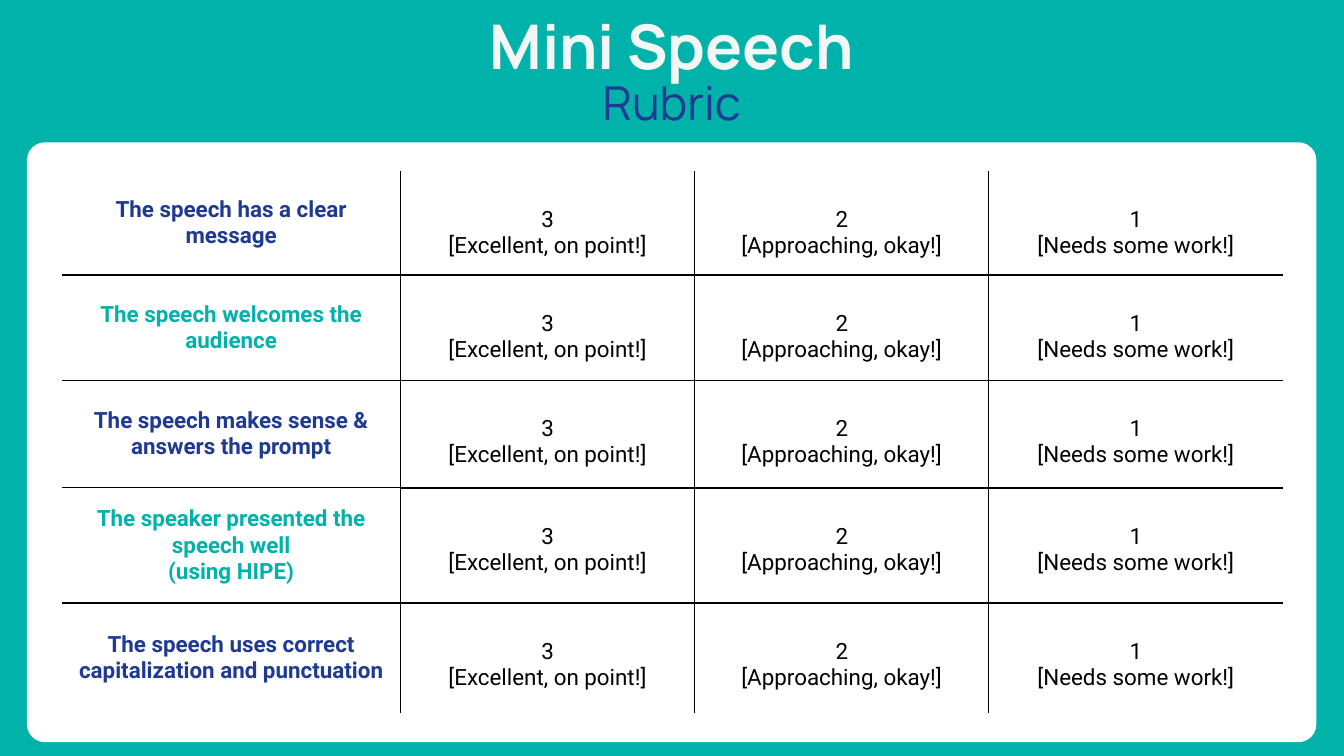
import pptx
import pptx.util
import pptx.dml.color
import pptx.enum.shapes
import pptx.enum.text
import pptx.oxml.ns
import lxml.etree

Cm = pptx.util.Cm
Pt = pptx.util.Pt
RGB = pptx.dml.color.RGBColor
ALIGN = pptx.enum.text.PP_ALIGN
ANCHOR = pptx.enum.text.MSO_ANCHOR

TEAL = RGB(0x00, 0xB2, 0xA9)
NAVY = RGB(0x1F, 0x3A, 0x92)
PALE = RGB(0xF2, 0xF6, 0xF5)
WHITE = RGB(0xFF, 0xFF, 0xFF)
BLACK = RGB(0x00, 0x00, 0x00)

GOALS = [
    "The speech has a clear message",
    "The speech welcomes the audience",
    "The speech makes sense & answers the prompt",
    "The speaker presented the speech well\n(using HIPE)",
    "The speech uses correct capitalization and punctuation",
]
MARKS = [
    "3\n[Excellent, on point!]",
    "2\n[Approaching, okay!]",
    "1\n[Needs some work!]",
]
COLS = [6.4, 5.56, 5.56, 5.56]
ROWS = [1.97, 1.99, 2.03, 2.18, 2.07]


class Deck:
    head = "Manrope"
    body = "Roboto"
    size = 12

    def __init__(self, file):
        self.slide = file.slides.add_slide(file.slide_layouts[5])
        fill = self.slide.background.fill
        fill.solid()
        fill.fore_color.rgb = TEAL

    def style(self, para, font, size, color, bold):
        para.alignment = ALIGN.CENTER
        for run in para.runs:
            run.font.name = font
            run.font.size = Pt(size)
            run.font.color.rgb = color
            run.font.bold = bold

    def title(self, main, sub, left, top, width, height):
        shape = self.slide.shapes.title
        shape.left, shape.top = Cm(left), Cm(top)
        shape.width, shape.height = Cm(width), Cm(height)
        frame = shape.text_frame
        frame.auto_size = pptx.enum.text.MSO_AUTO_SIZE.NONE
        frame.vertical_anchor = ANCHOR.MIDDLE
        frame.text = f"{main}\n{sub}"
        first, second = frame.paragraphs
        self.style(first, self.head, 33, PALE, True)
        self.style(second, self.head, 25, NAVY, False)
        for para in frame.paragraphs:
            para.line_spacing = 0.85

    def panel(self, left, top, width, height):
        kind = pptx.enum.shapes.MSO_SHAPE.ROUNDED_RECTANGLE
        shape = self.slide.shapes.add_shape(
            kind, Cm(left), Cm(top), Cm(width), Cm(height))
        shape.adjustments[0] = 0.03
        shape.shadow.inherit = False
        shape.fill.solid()
        shape.fill.fore_color.rgb = WHITE
        shape.line.fill.background()

    def edge(self, cell, side, width):
        """Draw one cell border; a width of 0 hides it."""
        qn = pptx.oxml.ns.qn
        line = lxml.etree.SubElement(
            cell._tc.get_or_add_tcPr(), qn(f"a:ln{side}"), w=str(Pt(width)))
        if not width:
            lxml.etree.SubElement(line, qn("a:noFill"))
            return
        fill = lxml.etree.SubElement(line, qn("a:solidFill"))
        lxml.etree.SubElement(fill, qn("a:srgbClr"), val=str(BLACK))

    def cell(self, cell, text, color, bold):
        cell.margin_left = cell.margin_right = Cm(0.18)
        cell.margin_top = cell.margin_bottom = Cm(0.18)
        cell.text_frame.text = text
        for para in cell.text_frame.paragraphs:
            self.style(para, self.body, self.size, color, bold)

    def table(self, left, top):
        grid = self.slide.shapes.add_table(
            len(ROWS), len(COLS), Cm(left), Cm(top),
            Cm(sum(COLS)), Cm(sum(ROWS))).table
        grid.first_row = grid.horz_banding = False
        for col, width in zip(grid.columns, COLS):
            col.width = Cm(width)
        for row, height in zip(grid.rows, ROWS):
            row.height = Cm(height)

        for r, goal in enumerate(GOALS):
            for c, text in enumerate([goal] + MARKS):
                cell = grid.cell(r, c)
                if c == 0:
                    self.cell(cell, text, NAVY if r % 2 == 0 else TEAL, True)
                    cell.vertical_anchor = ANCHOR.MIDDLE
                else:
                    self.cell(cell, text, BLACK, False)
                    cell.margin_top = Cm(0.67)
                rule = 1 if c else 0.75
                self.edge(cell, "L", 0.75 if c else 0)
                self.edge(cell, "R", 0.75 if c < len(COLS) - 1 else 0)
                self.edge(cell, "T", rule if r else 0)
                self.edge(cell, "B", rule if r < len(ROWS) - 1 else 0)
                cell.fill.background()


def main():
    file = pptx.Presentation()
    file.slide_width, file.slide_height = Cm(25.4), Cm(14.29)
    deck = Deck(file)
    deck.title("Mini Speech", "Rubric", 0.51, 0.15, 24.37, 2.52)
    deck.panel(0.51, 2.69, 24.37, 11.34)
    deck.table(1.17, 3.23)
    file.save("out.pptx")


if __name__ == "__main__":
    main()
